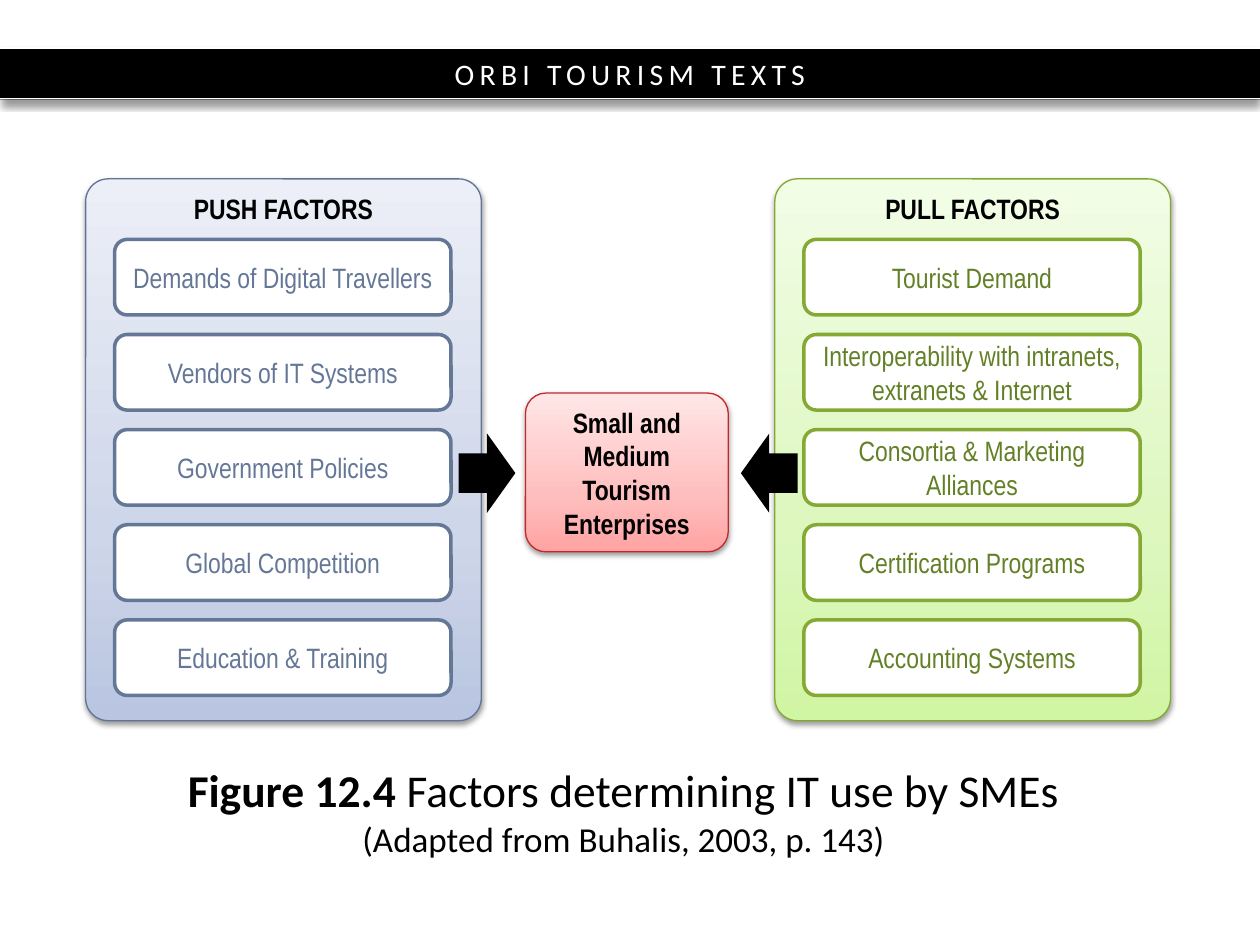
from dataclasses import dataclass

from lxml import etree
from pptx import Presentation
from pptx.dml.color import RGBColor
from pptx.enum.shapes import MSO_CONNECTOR, MSO_SHAPE
from pptx.enum.text import MSO_ANCHOR, PP_ALIGN
from pptx.oxml.ns import qn
from pptx.util import Inches, Pt

RECT, ROUND, ARROW = MSO_SHAPE.RECTANGLE, MSO_SHAPE.ROUNDED_RECTANGLE, MSO_SHAPE.RIGHT_ARROW
TOP, MIDDLE = MSO_ANCHOR.TOP, MSO_ANCHOR.MIDDLE
CENTER = PP_ALIGN.CENTER
STRAIGHT = MSO_CONNECTOR.STRAIGHT

BLACK = RGBColor(0x00, 0x00, 0x00)
WHITE = RGBColor(0xFF, 0xFF, 0xFF)
BLUE_EDGE = RGBColor(0x62, 0x74, 0x95)
BLUE = RGBColor(0x65, 0x77, 0x97)
GREEN_EDGE = RGBColor(0x82, 0xA9, 0x2F)
GREEN = RGBColor(0x84, 0xAA, 0x33)
GREEN_TEXT = RGBColor(0x63, 0x80, 0x26)
RED_EDGE = RGBColor(0xC2, 0x28, 0x29)

# Gradient colours from bottom to top
STOPS = (0, 35, 100)
BLUE_FADE = (RGBColor(0xB9, 0xC5, 0xE1), RGBColor(0xCE, 0xD6, 0xE9), RGBColor(0xEC, 0xEF, 0xF7))
GREEN_FADE = (RGBColor(0xD0, 0xF5, 0xA3), RGBColor(0xDD, 0xF7, 0xBF), RGBColor(0xF2, 0xFD, 0xE6))
RED_FADE = (RGBColor(0xFF, 0xA3, 0xA3), RGBColor(0xFF, 0xBE, 0xBE), RGBColor(0xFF, 0xE6, 0xE6))

NARROW, SANS = "Arial Narrow", "Calibri"
PANEL_TOP, PANEL_W, PANEL_H = 1.42, 3.14, 4.3
BOX_TOP, BOX_W, BOX_H, BOX_PITCH = 1.9, 2.67, 0.6, 0.755


@dataclass
class Panel:
    left: float
    heading: str
    factors: tuple
    fade: tuple
    edge: RGBColor
    box_edge: RGBColor
    text: RGBColor


PANELS = (
    Panel(0.68, "PUSH FACTORS",
          ("Demands of Digital Travellers", "Vendors of IT Systems", "Government Policies",
           "Global Competition", "Education & Training"),
          BLUE_FADE, BLUE_EDGE, BLUE, BLUE),
    Panel(6.15, "PULL FACTORS",
          ("Tourist Demand", "Interoperability with intranets, extranets & Internet",
           "Consortia & Marketing Alliances", "Certification Programs", "Accounting Systems"),
          GREEN_FADE, GREEN_EDGE, GREEN, GREEN_TEXT),
)


def add_run(p, text: str, *, size: float = 16, font: str = NARROW, color: RGBColor = BLACK,
            bold: bool = False, spacing: float = 0) -> None:
    p.alignment = CENTER
    r = p.add_run()
    r.text = text
    r.font.size, r.font.name, r.font.bold = Pt(size), font, bold
    r.font.color.rgb = color
    if spacing:
        r.font._element.set("spc", str(round(spacing * 100)))


def set_text(sp, *lines: str, anchor=MIDDLE, **fmt) -> None:
    tf = sp.text_frame
    tf.word_wrap, tf.vertical_anchor = True, anchor
    for i, line in enumerate(lines):
        add_run(tf.add_paragraph() if i else tf.paragraphs[0], line, **fmt)


def add_box(slide, kind, left: float, top: float, width: float, height: float, *,
            fill: RGBColor = BLACK, line: RGBColor | None = None, weight: float = 0.75,
            adj: float | None = None):
    sp = slide.shapes.add_shape(kind, Inches(left), Inches(top), Inches(width), Inches(height))
    sp.shadow.inherit = False
    sp.fill.solid()
    sp.fill.fore_color.rgb = fill
    if line is None:
        sp.line.fill.background()
    else:
        sp.line.color.rgb, sp.line.width = line, Pt(weight)
    if adj is not None:
        sp.adjustments[0] = adj
    return sp


def set_fade(sp, colors: tuple) -> None:
    """Replace the solid fill by an upward three-stop gradient."""
    solid = sp._element.spPr.find(qn("a:solidFill"))
    grad = etree.Element(qn("a:gradFill"), rotWithShape="1")
    stops = etree.SubElement(grad, qn("a:gsLst"))
    for pos, color in zip(STOPS, colors):
        gs = etree.SubElement(stops, qn("a:gs"), pos=str(pos * 1000))
        etree.SubElement(gs, qn("a:srgbClr"), val=str(color))
    etree.SubElement(grad, qn("a:lin"), ang=str(270 * 60000), scaled="0")
    solid.getparent().replace(solid, grad)


def set_shadow(sp, alpha: int = 38, blur: float = 3.1, dist: float = 1.6) -> None:
    effects = sp._element.spPr.find(qn("a:effectLst"))
    shadow = etree.SubElement(effects, qn("a:outerShdw"), blurRad=str(Pt(blur)),
                              dist=str(Pt(dist)), dir=str(90 * 60000), rotWithShape="0")
    color = etree.SubElement(shadow, qn("a:srgbClr"), val=str(BLACK))
    etree.SubElement(color, qn("a:alpha"), val=str(alpha * 1000))


def add_rule(slide, y: float) -> None:
    ln = slide.shapes.add_connector(STRAIGHT, 0, Inches(y), Inches(10), Inches(y))
    ln.line.color.rgb, ln.line.width = WHITE, Pt(0.75)
    etree.SubElement(ln._element.spPr, qn("a:effectLst"))


def add_panel(slide, panel: Panel) -> None:
    sp = add_box(slide, ROUND, panel.left, PANEL_TOP, PANEL_W, PANEL_H, line=panel.edge, adj=0.057)
    set_fade(sp, panel.fade)
    set_shadow(sp)
    set_text(sp, panel.heading, anchor=TOP, bold=True)
    for i, factor in enumerate(panel.factors):
        sp = add_box(slide, ROUND, panel.left + 0.23, BOX_TOP + i * BOX_PITCH, BOX_W, BOX_H,
                     fill=WHITE, line=panel.box_edge, weight=2)
        set_text(sp, factor, color=panel.text)


def main() -> None:
    prs = Presentation()
    prs.slide_width, prs.slide_height = Inches(10), Inches(7.5)
    slide = prs.slides.add_slide(prs.slide_layouts[6])

    # Header band
    band = add_box(slide, RECT, 0, 0.38, 10, 0.41)
    set_shadow(band, 40, 4, 3)
    set_text(band, "ORBI TOURISM TEXTS", size=17, font=SANS, color=WHITE, spacing=3)
    for y in (0.38, 0.78):
        add_rule(slide, y)

    # Factor panels
    for panel in PANELS:
        add_panel(slide, panel)

    # Enterprises in the centre
    hub = add_box(slide, ROUND, 4.17, 3.12, 1.61, 1.26, line=RED_EDGE, adj=0.129)
    set_fade(hub, RED_FADE)
    set_shadow(hub)
    set_text(hub, "Small and", "Medium", "Tourism", "Enterprises", bold=True)

    # Arrows towards the centre
    for left, rotation in ((3.64, 0), (5.88, 180)):
        add_box(slide, ARROW, left, 3.44, 0.45, 0.63).rotation = rotation

    # Caption
    caption = slide.shapes.add_textbox(Inches(0.67), Inches(6.03), Inches(8.56), Inches(0.81))
    set_text(caption, "Figure 12.4 ", size=26, font=SANS, bold=True)
    p = caption.text_frame.paragraphs[0]
    add_run(p, "Factors determining IT use by SMEs", size=26, font=SANS)
    p.add_line_break()
    add_run(p, "(Adapted from Buhalis, 2003, p. 143)", size=20, font=SANS)

    prs.save("out.pptx")


if __name__ == "__main__":
    main()
